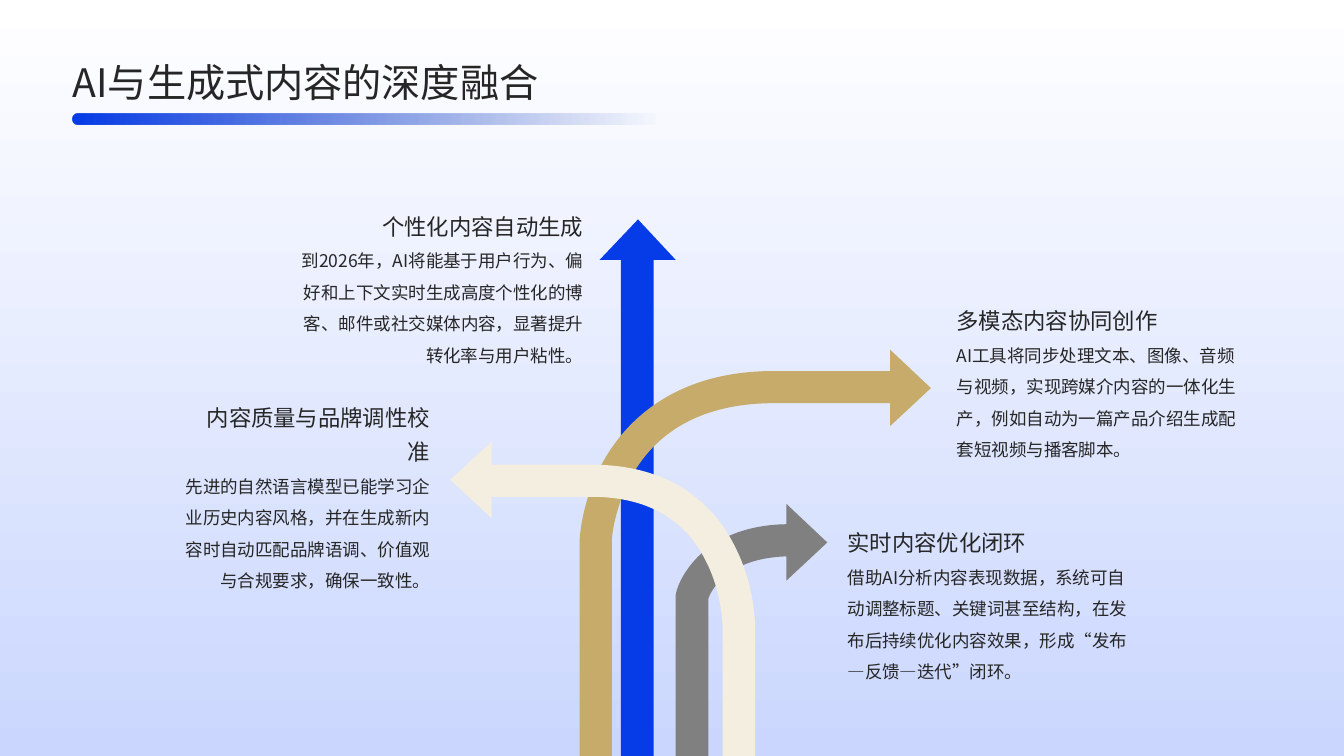
from lxml.etree import SubElement
from pptx import Presentation
from pptx.dml.color import RGBColor
from pptx.enum.shapes import MSO_SHAPE as Shape
from pptx.enum.text import MSO_ANCHOR as Anchor, MSO_AUTO_SIZE as AutoSize, PP_ALIGN as Align
from pptx.oxml.ns import qn
from pptx.util import Cm, Pt

FONT = "Noto Sans CJK SC"
COLORS = {
    "ink": "262626", "sky_top": "FFFFFF", "sky_bottom": "CAD6FE",
    "blue": "063CE8", "deep_blue": "052DAE",
    "gold": "C6AB6A", "gray": "808080", "cream": "F4EEE1",
}
TITLE = "AI与生成式内容的深度融合"

# Heading, body, alignment, x of the aligned edge, top, body width (cm)
TRENDS = [
    ("个性化内容自动生成",
     "到2026年，AI将能基于用户行为、偏好和上下文实时生成高度个性化的博客、邮件或社交媒体内容，显著提升转化率与用户粘性。",
     Align.RIGHT, 14.7, 4.26, 7.29),
    ("内容质量与品牌调性校准",
     "先进的自然语言模型已能学习企业历史内容风格，并在生成新内容时自动匹配品牌语调、价值观与合规要求，确保一致性。",
     Align.RIGHT, 10.84, 9.95, 6.5),
    ("多模态内容协同创作",
     "AI工具将同步处理文本、图像、音频与视频，实现跨媒介内容的一体化生产，例如自动为一篇产品介绍生成配套短视频与播客脚本。",
     Align.LEFT, 24.11, 6.64, 7.29),
    ("实时内容优化闭环",
     "借助AI分析内容表现数据，系统可自动调整标题、关键词甚至结构，在发布后持续优化内容效果，形成“发布—反馈—迭代”闭环。",
     Align.LEFT, 21.36, 12.24, 7.29),
]
HEADING_W, HEADING_H, BODY_H = 6, 1.78, 3.3

# Arrow outlines in cm: two numbers are a corner, six are a Bezier curve
SLIDE_W, SLIDE_H = 33.87, 19.05
GRAY_END, CREAM_END = 20.68, 19.23
ARROWS = {
    "blue": [(16.08, 5.53), (15.11, 6.55), (15.65, 6.55), (15.65, SLIDE_H),
             (16.47, SLIDE_H), (16.47, 6.55), (17.03, 6.55)],
    "gold": [(22.43, 8.81), (22.43, 9.35), (19.51, 9.35),
             (17.09, 9.35, 15.88, 10.52, 15.29, 11.48),
             (14.66, 12.52, 14.61, 13.56, 14.61, 13.59),
             (14.61, SLIDE_H), (15.42, SLIDE_H), (15.42, 13.61),
             (15.42, 13.54, 15.49, 12.7, 16, 11.86),
             (16.69, 10.74, 17.88, 10.16, 19.51, 10.16),
             (22.43, 10.16), (22.43, 10.74), (23.46, 9.78)],
    "gray": [(19.82, 12.7), (19.82, 13.21),
             (18.64, 13.23, 17.96, 13.67, 17.6, 14.02),
             (17.17, 14.45, 17.04, 14.88, 17.03, 14.99),
             (17.03, GRAY_END), (17.85, GRAY_END), (17.85, 15.09),
             (17.91, 14.91, 18.29, 14.07, 19.82, 14.02),
             (19.82, 14.63), (20.85, 13.67)],
    "cream": [(12.39, 11.13), (11.35, 12.09), (12.39, 13.06), (12.39, 12.52), (14.91, 12.52),
              (16.28, 12.52, 17.25, 13.06, 17.78, 14.12),
              (18.21, 14.94, 18.21, 15.8, 18.21, 15.8),
              (18.21, CREAM_END), (19.03, CREAM_END), (19.03, 15.8),
              (19.03, 15.75, 19.03, 14.76, 18.52, 13.77),
              (18.06, 12.83, 17.04, 11.71, 14.91, 11.71), (12.39, 11.71)],
}


def color(name):
    return RGBColor.from_string(COLORS[name])


def fill_gradient(shape, angle, stops):
    shape.line.fill.background()
    shape.shadow.inherit = False
    shape.fill.gradient()
    shape.fill.gradient_angle = angle
    for stop, (position, name) in zip(shape.fill.gradient_stops, stops):
        stop.position = position
        stop.color.rgb = color(name)


def write(box, text, size, spacing, align, anchor):
    frame = box.text_frame
    frame.text = text
    frame.word_wrap = True
    frame.auto_size = AutoSize.NONE
    frame.vertical_anchor = anchor
    frame.margin_left = frame.margin_right = frame.margin_top = frame.margin_bottom = 0
    paragraph = frame.paragraphs[0]
    paragraph.alignment = align
    paragraph.line_spacing = spacing
    font = paragraph.runs[0].font
    font.size = Pt(size)
    font.name = FONT
    font.color.rgb = color("ink")
    SubElement(font._element, qn("a:ea"), typeface=FONT)


def draw_arrow(outline):
    """Build the outline from its end points, then bend the curved segments."""
    start, *ends = [(Cm(step[-2]), Cm(step[-1])) for step in outline]
    builder = shapes.build_freeform(*start)
    builder.add_line_segments(ends, close=True)
    arrow = builder.convert_to_shape()
    segments = list(arrow.element.iter(qn("a:lnTo")))
    for segment, step in zip(segments, outline[1:]):
        if len(step) == 6:
            segment.tag = qn("a:cubicBezTo")
            for i, (x, y) in enumerate((step[:2], step[2:4])):
                control = SubElement(segment, qn("a:pt"),
                                     x=str(Cm(x) - arrow.left), y=str(Cm(y) - arrow.top))
                segment.insert(i, control)
    return arrow


prs = Presentation()
prs.slide_width, prs.slide_height = Cm(SLIDE_W), Cm(SLIDE_H)
slide = prs.slides.add_slide(prs.slide_layouts[5])
shapes = slide.shapes
title = shapes.title

# Backdrop, placed behind the title
backdrop = shapes.add_shape(Shape.RECTANGLE, 0, 0, prs.slide_width, prs.slide_height)
fill_gradient(backdrop, 270, [(0, "sky_top"), (1, "sky_bottom")])
title.element.addprevious(backdrop.element)

# Arrows
for name, outline in ARROWS.items():
    arrow = draw_arrow(outline)
    arrow.fill.solid()
    arrow.fill.fore_color.rgb = color(name)
    arrow.line.fill.background()
    arrow.shadow.inherit = False

# Trend texts
for heading, body, align, edge, top, body_w in TRENDS:
    for text, y, w, h, size, spacing, anchor in (
            (heading, top, HEADING_W, HEADING_H, 16, 1.3, Anchor.BOTTOM),
            (body, top + HEADING_H, body_w, BODY_H, 12.5, 1.5, Anchor.TOP)):
        x = edge - w if align == Align.RIGHT else edge
        box = shapes.add_textbox(Cm(x), Cm(y), Cm(w), Cm(h))
        write(box, text, size, spacing, align, anchor)

# Title and the fading bar below it
title.left, title.top, title.width, title.height = Cm(1.83), Cm(1.35), Cm(30.18), Cm(1.3)
write(title, TITLE, 28, 1.1, Align.LEFT, Anchor.MIDDLE)

bar = shapes.add_shape(Shape.ROUNDED_RECTANGLE, Cm(1.83), Cm(2.86), Cm(18.42), Cm(0.28))
bar.adjustments[0] = 0.5
fill_gradient(bar, 0, [(0, "blue"), (0.8, "deep_blue")])
fade_end = list(bar.element.spPr.iter(qn("a:srgbClr")))[-1]
SubElement(fade_end, qn("a:alpha"), val="0")

prs.save("out.pptx")
